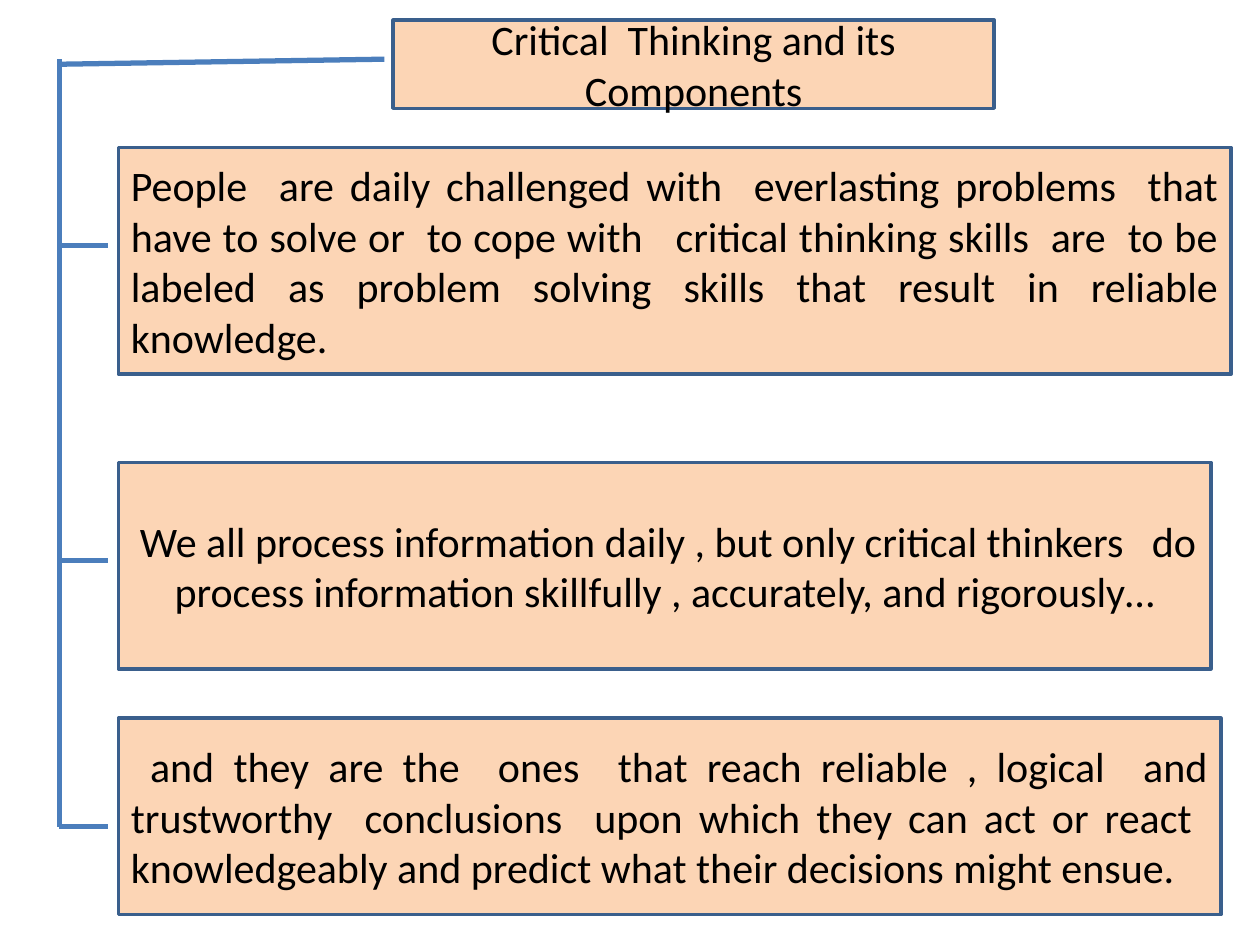
"""Build a slide of critical-thinking statements hung on a bracket of lines."""
from dataclasses import dataclass

from lxml import etree
from pptx import Presentation
from pptx import util as u
from pptx.dml.color import RGBColor
from pptx.enum import shapes, text
from pptx.oxml.ns import qn

COLORS = {"fill": "FCD5B5", "border": "3A5F8C", "line": "4B7EBC",
          "text": "000000", "blank": "FFFFFF"}
FONT = "Calibri"
COLUMNS, ROWS = 100, 75
WIDTH, HEIGHT = u.Inches(10), u.Inches(7.5)
BOX_LEFT = 9.4
TRUNK, TRUNK_TOP, TICK_END = 4.7, 4.7, 8.6
TICK_ROWS = (19.5, 44.5, 65.6)


@dataclass(frozen=True)
class Run:
    """A stretch of text with its size and colour."""
    words: str
    size: int = 24
    color: str = "text"


@dataclass(frozen=True)
class Box:
    """A statement box placed on the grid."""
    left: float
    top: float
    width: float
    height: float
    align: text.PP_ALIGN
    runs: tuple[Run, ...]


TITLE = Box(31.2, 1.6, 47.7, 7, text.PP_ALIGN.CENTER,
            (Run("Critical  Thinking and its Components"),))
STATEMENTS = (
    Box(BOX_LEFT, 11.7, 88.3, 18, text.PP_ALIGN.JUSTIFY, (
        Run("People  are daily challenged with  everlasting problems  that have to solve or  "
            "to cope with   critical thinking skills  are  to be labeled as problem solving "
            "skills that result in reliable knowledge."),)),
    Box(BOX_LEFT, 36.7, 86.7, 16.4, text.PP_ALIGN.CENTER, (
        Run(" ", 18, "blank"),
        Run("We all process information daily , but only critical thinkers   do process "
            "information skillfully , accurately, and rigorously…"))),
    Box(BOX_LEFT, 57, 87.5, 15.6, text.PP_ALIGN.JUSTIFY, (
        Run(" and they are the  ones  that reach reliable , logical  and trustworthy  "
            "conclusions  upon which they can act or react  knowledgeably and predict what "
            "their decisions might ensue."),)),
)


def across(columns: float) -> int:
    """Turn grid columns into a length."""
    return round(WIDTH * columns / COLUMNS)


def down(rows: float) -> int:
    """Turn grid rows into a length."""
    return round(HEIGHT * rows / ROWS)


def color(name: str) -> RGBColor:
    """Look up a named colour."""
    return RGBColor.from_string(COLORS[name])


def format_box(shape, box: Box) -> None:
    """Place a shape, paint it and write its runs."""
    shape.left, shape.top = across(box.left), down(box.top)
    shape.width, shape.height = across(box.width), down(box.height)
    shape.fill.solid()
    shape.fill.fore_color.rgb = color("fill")
    shape.line.color.rgb = color("border")
    shape.line.width = u.Pt(2)
    frame = shape.text_frame
    frame.word_wrap = True
    frame.auto_size = text.MSO_AUTO_SIZE.NONE
    frame.vertical_anchor = text.MSO_ANCHOR.MIDDLE
    paragraph = frame.paragraphs[0]
    paragraph.alignment = box.align
    for item in box.runs:
        run = paragraph.add_run()
        run.text = item.words
        run.font.name = FONT
        run.font.size = u.Pt(item.size)
        run.font.color.rgb = color(item.color)


def add_statement(slide, box: Box) -> None:
    """Add one rectangular statement box."""
    shape = slide.shapes.add_shape(shapes.MSO_SHAPE.RECTANGLE, 0, 0, 0, 0)
    shape.shadow.inherit = False
    format_box(shape, box)


def add_line(slide, start: tuple[float, float], end: tuple[float, float]) -> None:
    """Draw a straight bracket line between two grid points."""
    line = slide.shapes.add_connector(
        shapes.MSO_CONNECTOR.STRAIGHT,
        across(start[0]), down(start[1]), across(end[0]), down(end[1]))
    line.line.color.rgb = color("line")
    line.line.width = u.Pt(3)
    etree.SubElement(line._element.spPr, qn("a:effectLst"))


def main() -> None:
    """Assemble and save the slide."""
    presentation = Presentation()
    presentation.slide_width, presentation.slide_height = WIDTH, HEIGHT
    slide = presentation.slides.add_slide(presentation.slide_layouts.get_by_name("Title Only"))
    format_box(slide.shapes.title, TITLE)
    for box in STATEMENTS:
        add_statement(slide, box)
    add_line(slide, (30.5, 4.7), (TRUNK, 5.1))
    add_line(slide, (TRUNK, TRUNK_TOP), (TRUNK, TICK_ROWS[-1]))
    for row in TICK_ROWS:
        add_line(slide, (TRUNK, row), (TICK_END, row))
    presentation.save("out.pptx")


if __name__ == "__main__":
    main()
